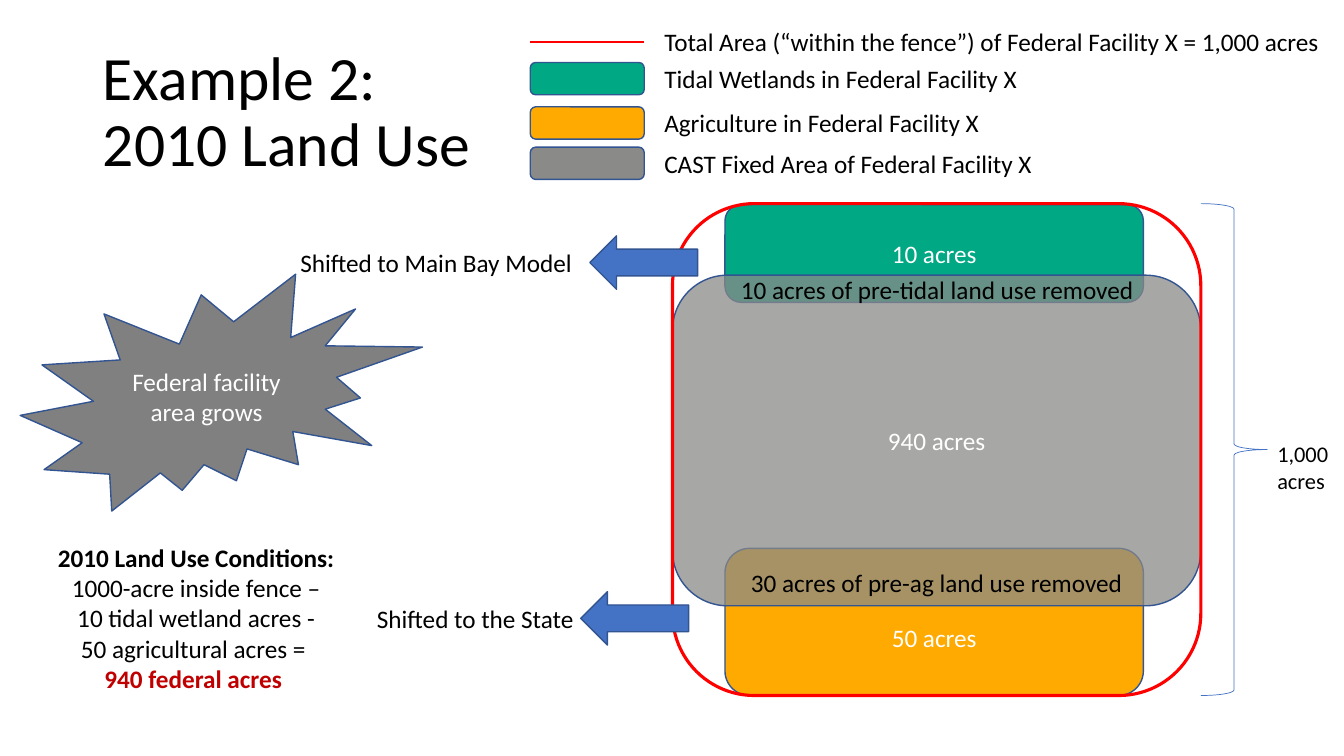
import pptx
import pptx.util
import pptx.dml.color
import pptx.enum.shapes
import pptx.enum.text
import pptx.oxml
import pptx.oxml.ns

Inches = pptx.util.Inches
KIND = pptx.enum.shapes.MSO_SHAPE
ALIGN = pptx.enum.text.PP_ALIGN
ANCHOR = pptx.enum.text.MSO_ANCHOR

THEME = {
    "font": "Calibri", "title": 44, "body": 18, "small": 16,
    "black": "000000", "white": "FFFFFF", "wetland": "00A884",
    "farm": "FFAA00", "fixed": "8A8A88", "burst": "808080",
    "fence": "FF0000", "blue": "4472C4", "outline": "325491", "total": "C00000",
}

TITLE = "Example 2:\v2010 Land Use"
FENCE_LABEL = "Total Area (“within the fence”) of Federal Facility X = 1,000 acres"
LEGEND = [
    ("Tidal Wetlands in Federal Facility X", "wetland", 0.62, 3.8),
    ("Agriculture in Federal Facility X", "farm", 1.06, 3.42),
    ("CAST Fixed Area of Federal Facility X", "fixed", 1.46, 3.89),
]
CONDITIONS = [
    ("2010 Land Use Conditions:", True, "black"),
    ("1000-acre inside fence –", False, "black"),
    ("10 tidal wetland acres -", False, "black"),
    ("50 agricultural acres = ", False, "black"),
    ("940 federal acres ", True, "total"),
]
BURST_LINES = ["Federal facility ", "area grows"]
NOTES = [
    ("Shifted to Main Bay Model", 2.88, 2.4, 2.93),
    ("Shifted to the State", 3.64, 5.94, 2.18),
    ("10 acres of pre-tidal land use removed", 7.25, 2.67, 4.15),
    ("30 acres of pre-ag land use removed", 7.35, 5.58, 3.93),
]
ARROWS = [(5.85, 2.34), (5.76, 5.87)]

SWATCH_LEFT, SWATCH_WIDTH, SWATCH_HEIGHT = 5.26, 1.13, 0.32
LABEL_LEFT, LABEL_HEIGHT = 6.49, 0.4
FENCE_LEFT, FENCE_TOP, FENCE_WIDTH, FENCE_HEIGHT = 6.67, 2.02, 5.24, 4.88
FENCE_RIGHT = FENCE_LEFT + FENCE_WIDTH
LAND_LEFT, LAND_WIDTH = 7.19, 4.15

deck = pptx.Presentation()
deck.slide_width, deck.slide_height = Inches(13.33), Inches(7.5)
page = deck.slides.add_slide(deck.slide_layouts[5])


def color(name):
    return pptx.dml.color.RGBColor.from_string(THEME[name])


def write(para, text, size="body", ink="black", bold=False, align=None):
    para.text = text
    para.alignment = align
    for span in para.runs:
        span.font.name = THEME["font"]
        span.font.size = pptx.util.Pt(THEME[size])
        span.font.bold = bold
        span.font.color.rgb = color(ink)


def add_label(text, left, top, width, height=LABEL_HEIGHT, wrap=False, **style):
    box = page.shapes.add_textbox(*map(Inches, (left, top, width, height)))
    box.text_frame.word_wrap = wrap
    box.text_frame.auto_size = pptx.enum.text.MSO_AUTO_SIZE.SHAPE_TO_FIT_TEXT
    write(box.text_frame.paragraphs[0], text, **style)
    return box


def add_figure(kind, left, top, width, height, fill=None, line="outline",
               weight=1, lines=(), opacity=None):
    box = page.shapes.add_shape(kind, *map(Inches, (left, top, width, height)))
    box.shadow.inherit = False
    if fill:
        box.fill.solid()
        box.fill.fore_color.rgb = color(fill)
    else:
        box.fill.background()
    if opacity:
        tint = box._element.spPr.find(".//" + pptx.oxml.ns.qn("a:srgbClr"))
        alpha = pptx.oxml.parse_xml("<a:alpha %s/>" % pptx.oxml.ns.nsdecls("a"))
        alpha.set("val", str(opacity * 1000))
        tint.append(alpha)
    box.line.color.rgb = color(line)
    box.line.width = pptx.util.Pt(weight)
    frame = box.text_frame
    frame.vertical_anchor = ANCHOR.MIDDLE
    for index, text in enumerate(lines):
        para = frame.add_paragraph() if index else frame.paragraphs[0]
        write(para, text, ink="white", align=ALIGN.CENTER)
    return box


def add_title():
    box = page.shapes.title
    box.left, box.top, box.width, box.height = map(Inches, (0.92, 0.4, 11.5, 1.45))
    box.text_frame.vertical_anchor = ANCHOR.MIDDLE
    box.text_frame.word_wrap = True
    para = box.text_frame.paragraphs[0]
    write(para, TITLE, size="title", align=ALIGN.LEFT)
    para.line_spacing = 0.9


def add_legend():
    rule = page.shapes.add_connector(
        pptx.enum.shapes.MSO_CONNECTOR.STRAIGHT,
        *map(Inches, (SWATCH_LEFT, 0.42, SWATCH_LEFT + SWATCH_WIDTH, 0.42)))
    rule.line.color.rgb = color("fence")
    rule.line.width = pptx.util.Pt(1.5)
    rule._element.spPr.append(
        pptx.oxml.parse_xml("<a:effectLst %s/>" % pptx.oxml.ns.nsdecls("a")))
    add_label(FENCE_LABEL, LABEL_LEFT, 0.21, 6.84)
    for text, fill, top, width in LEGEND:
        add_figure(KIND.ROUNDED_RECTANGLE, SWATCH_LEFT, top,
                   SWATCH_WIDTH, SWATCH_HEIGHT, fill=fill)
        add_label(text, LABEL_LEFT, top - 0.04, width)


def add_facility():
    rounded = KIND.ROUNDED_RECTANGLE
    add_figure(rounded, LAND_LEFT, 2.03, LAND_WIDTH, 0.97,
               fill="wetland", lines=["10 acres"])
    farm = add_figure(rounded, LAND_LEFT, 5.44, LAND_WIDTH, 1.46,
                      fill="farm", lines=["50 acres"])
    farm.text_frame.margin_top = Inches(0.35)
    add_figure(rounded, FENCE_LEFT, 2.73, FENCE_WIDTH, 3.28,
               fill="fixed", opacity=75, lines=["940 acres"])
    add_figure(KIND.RIGHT_BRACE, FENCE_RIGHT, FENCE_TOP, 0.66, FENCE_HEIGHT,
               line="blue", weight=0.5)
    add_label("1,000 acres", 12.57, 4.32, 0.76, 0.64, wrap=True, size="small")
    add_figure(rounded, FENCE_LEFT, FENCE_TOP, FENCE_WIDTH, FENCE_HEIGHT,
               line="fence", weight=2.25)


def add_changes():
    for left, top in ARROWS:
        add_figure(KIND.LEFT_ARROW, left, top, 1.07, 0.53, fill="blue")
    add_figure(KIND.EXPLOSION2, 0.2, 2.72, 3.99, 2.35,
               fill="burst", lines=BURST_LINES)
    for text, left, top, width in NOTES:
        add_label(text, left, top, width)


def add_conditions():
    (text, bold, ink), *rest = CONDITIONS
    box = add_label(text, 0.2, 5.33, 3.49, 1.62, wrap=True,
                    bold=bold, ink=ink, align=ALIGN.CENTER)
    for text, bold, ink in rest:
        write(box.text_frame.add_paragraph(), text,
              bold=bold, ink=ink, align=ALIGN.CENTER)


add_title()
add_legend()
add_facility()
add_changes()
add_conditions()
deck.save("out.pptx")
